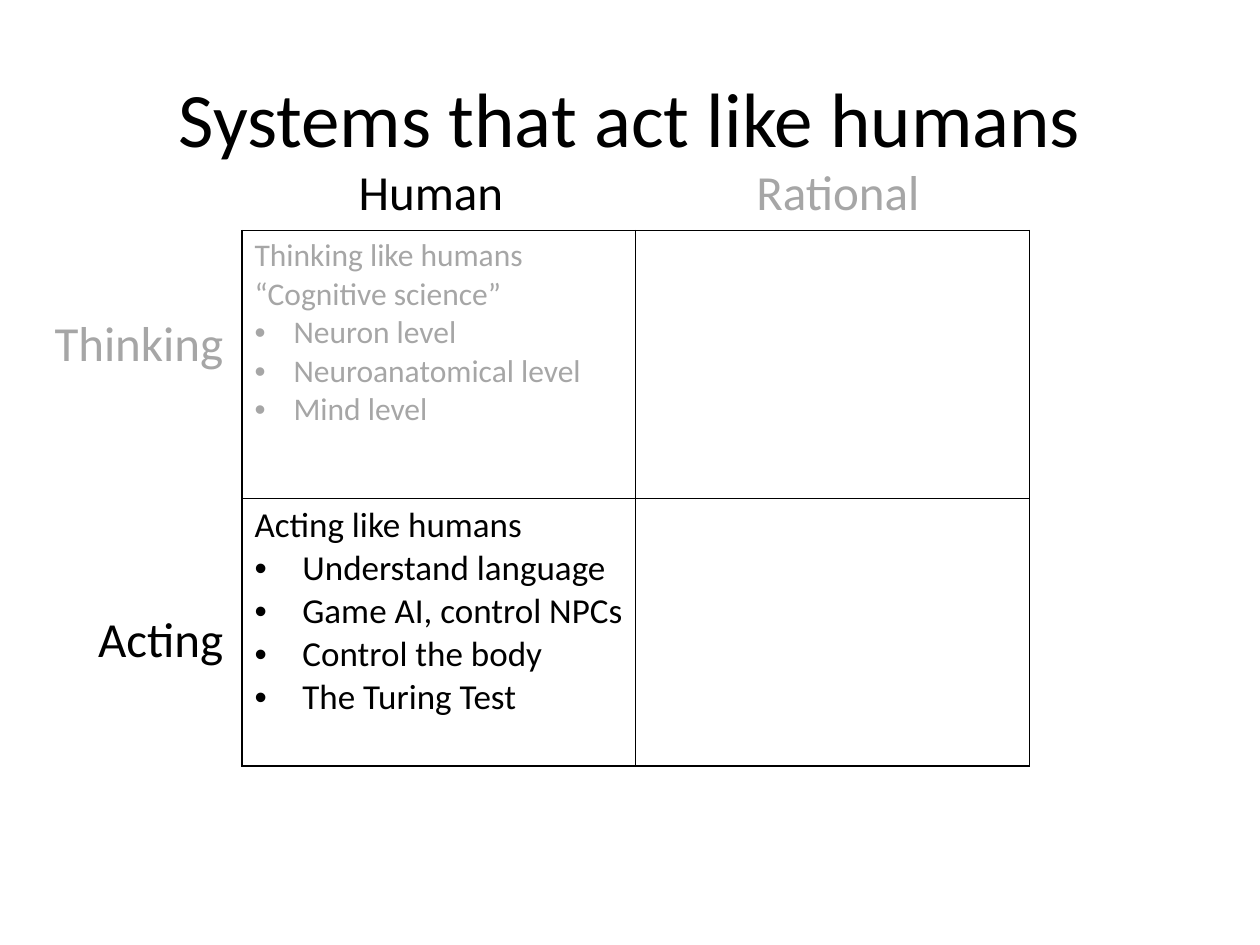
from lxml import etree
from pptx import Presentation
from pptx.dml.color import RGBColor
from pptx.enum.text import MSO_ANCHOR, PP_ALIGN
from pptx.oxml.ns import qn
from pptx.util import Inches, Pt

CENTER, RIGHT = PP_ALIGN.CENTER, PP_ALIGN.RIGHT
MIDDLE = MSO_ANCHOR.MIDDLE
COLORS = {"active": "000000", "muted": "A6A6A6", "border": "000000"}
FONT = "Calibri"

# Content
TITLE = "Systems that act like humans"
# text, left, top, width, alignment, colour
AXIS_LABELS = [
    ("Human", 2.42, 1.23, 2, CENTER, "active"),
    ("Rational", 5.65, 1.23, 2, CENTER, "muted"),
    ("Thinking", 0.33, 2.43, 1.54, RIGHT, "muted"),
    ("Acting", 0.33, 4.78, 1.54, RIGHT, "active"),
]
LABEL_HEIGHT = 0.57
# One entry per table row; its text goes in the Human column
HUMAN_CELLS = [
    {"heading": ["Thinking like humans", "“Cognitive science”"],
     "bullets": ["Neuron level", "Neuroanatomical level", "Mind level"],
     "size": 18, "color": "muted", "indent": 0.31},
    {"heading": ["Acting like humans"],
     "bullets": ["Understand language", "Game AI, control NPCs",
                 "Control the body", "The Turing Test"],
     "size": 20, "color": "active", "indent": 0.38},
]
TABLE_LEFT, TABLE_TOP = 1.92, 1.83
COLUMN_WIDTH, ROW_HEIGHT, COLUMN_COUNT = 3.125, 2.125, 2


def write(paragraph, text, size, color):
    run = paragraph.add_run()
    run.text = text
    for name, value in {"name": FONT, "size": Pt(size)}.items():
        setattr(run.font, name, value)
    run.font.color.rgb = RGBColor.from_string(COLORS[color])


def add_bullet(paragraph, indent):
    properties = paragraph._p.get_or_add_pPr()
    properties.set("marL", str(Inches(indent)))
    properties.set("indent", str(-Inches(indent)))
    etree.SubElement(properties, qn("a:buFont"), typeface="Arial")
    etree.SubElement(properties, qn("a:buChar"), char="•")


def outline(cell):
    properties = cell._tc.get_or_add_tcPr()
    for side in ("a:lnL", "a:lnR", "a:lnT", "a:lnB"):
        line = etree.SubElement(properties, qn(side), w=str(Pt(1)))
        fill = etree.SubElement(line, qn("a:solidFill"))
        etree.SubElement(fill, qn("a:srgbClr"), val=COLORS["border"])
    cell.fill.background()


presentation = Presentation()
presentation.slide_width, presentation.slide_height = Inches(10), Inches(7.5)
slide = presentation.slides.add_slide(presentation.slide_layouts[5])

# Title
title = slide.shapes.title
title.left, title.top = Inches(0.5), Inches(0.3)
title.width, title.height = Inches(9), Inches(1.25)
title.text_frame.vertical_anchor = MIDDLE
title_paragraph = title.text_frame.paragraphs[0]
title_paragraph.alignment = CENTER
write(title_paragraph, TITLE, 44, "active")

# Two-by-two table
row_count = len(HUMAN_CELLS)
table = slide.shapes.add_table(
    row_count, COLUMN_COUNT, Inches(TABLE_LEFT), Inches(TABLE_TOP),
    Inches(COLUMN_WIDTH * COLUMN_COUNT), Inches(ROW_HEIGHT * row_count)).table
table.first_row = table.horz_banding = False
for cell in table.iter_cells():
    outline(cell)
for row, content in enumerate(HUMAN_CELLS):
    frame = table.cell(row, 0).text_frame
    heading_count = len(content["heading"])
    for index, text in enumerate(content["heading"] + content["bullets"]):
        paragraph = frame.add_paragraph() if index else frame.paragraphs[0]
        if index >= heading_count:
            add_bullet(paragraph, content["indent"])
        write(paragraph, text, content["size"], content["color"])

# Column and row labels
for text, left, top, width, alignment, color in AXIS_LABELS:
    label = slide.shapes.add_textbox(
        Inches(left), Inches(top), Inches(width), Inches(LABEL_HEIGHT))
    label.text_frame.word_wrap = True
    paragraph = label.text_frame.paragraphs[0]
    paragraph.alignment = alignment
    write(paragraph, text, 28, color)

presentation.save("out.pptx")
